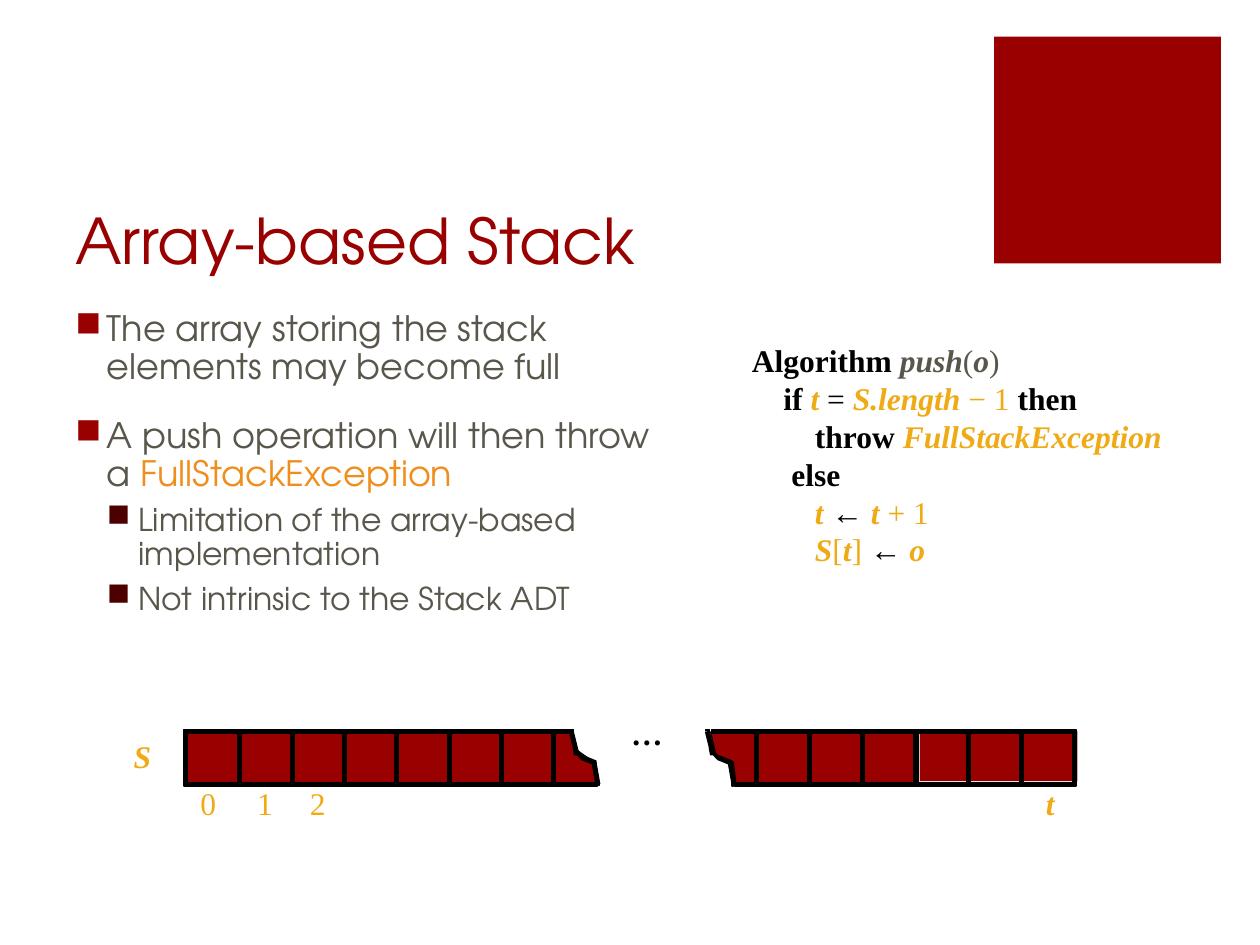
from dataclasses import dataclass

from lxml import etree
from pptx import Presentation
from pptx.dml.color import RGBColor
from pptx.enum.shapes import MSO_SHAPE as Shape
from pptx.enum.text import MSO_ANCHOR as Anchor, PP_ALIGN as Align
from pptx.oxml.ns import qn
from pptx.util import Inches, Pt


@dataclass(frozen=True)
class Theme:
    red: str = "990000"
    dark_red: str = "4C0000"
    gray: str = "59564B"
    orange: str = "EF8E1C"
    gold: str = "EFAB16"
    black: str = "000000"
    heading: str = "TeX Gyre Adventor"
    serif: str = "Times New Roman"
    title: int = 36
    body: int = 20
    small: int = 18
    line: float = 0.75


T = Theme()


class SlideBuilder:
    def __init__(self, slide, theme):
        self.s, self.t = slide, theme

    def style(self, sp, color, outlined):
        sp.shadow.inherit = False
        sp.fill.solid()
        sp.fill.fore_color.rgb = RGBColor.from_string(color)
        if outlined:
            sp.line.color.rgb = RGBColor.from_string(self.t.black)
            sp.line.width = Pt(self.t.line)
        else:
            sp.line.fill.background()

    def rect(self, x, y, w, h, color, outlined=False):
        sp = self.s.shapes.add_shape(Shape.RECTANGLE, Inches(x), Inches(y), Inches(w), Inches(h))
        self.style(sp, color, outlined)

    def bar(self, x, y, w, h):
        self.rect(x, y, w, h, self.t.black, True)

    def polygon(self, points, color, dx=0):
        (x, y), *rest = [(Inches(px + dx), Inches(py)) for px, py in points]
        fb = self.s.shapes.build_freeform(x, y)
        fb.add_line_segments(rest, close=True)
        self.style(fb.convert_to_shape(), color, True)

    def text_box(self, x, y, w, h, inset=True, wrap=True, anchor=Anchor.TOP):
        tf = self.s.shapes.add_textbox(Inches(x), Inches(y), Inches(w), Inches(h)).text_frame
        tf.word_wrap, tf.vertical_anchor = wrap, anchor
        if not inset:
            tf.margin_left = tf.margin_right = tf.margin_top = tf.margin_bottom = 0
        return tf

    def paragraph(self, tf, runs, size, font, align=Align.LEFT):
        """Each run is (text, color, flags); flags may hold b and i."""
        p = tf.paragraphs[0]
        if p.runs:
            p = tf.add_paragraph()
        p.alignment = align
        p.font.size, p.font.name = Pt(size), font
        for text, color, flags in runs:
            r = p.add_run()
            r.text = text
            r.font.color.rgb = RGBColor.from_string(color)
            r.font.bold, r.font.italic = "b" in flags, "i" in flags
        return p

    def bullet(self, tf, runs, level=0):
        size, before, color = [(self.t.body, 18, self.t.red),
                               (self.t.small, 6, self.t.dark_red)][level]
        p = self.paragraph(tf, runs, size, self.t.heading)
        p.level, p.line_spacing, p.space_before = level, 0.9, Pt(before)
        pPr = p._p.get_or_add_pPr()
        pPr.set("marL", str(Inches(0.25 * (level + 1))))
        pPr.set("indent", str(Inches(-0.25)))
        clr = etree.Element(qn("a:buClr"))
        etree.SubElement(clr, qn("a:srgbClr"), val=color)
        char = etree.Element(qn("a:buChar"), char="■")
        self.before_font(pPr, clr, char)

    def code_line(self, tf, runs):
        p = self.paragraph(tf, runs, self.t.small, self.t.serif)
        tabs = etree.Element(qn("a:tabLst"))
        for stop in (0.25, 0.5):
            etree.SubElement(tabs, qn("a:tab"), pos=str(Inches(stop)), algn="l")
        self.before_font(p._p.get_or_add_pPr(), tabs)

    def before_font(self, pPr, *elements):
        font = pPr.find(qn("a:defRPr"))
        for el in elements:
            font.addprevious(el)

    def label(self, text, x, y, w, color, flags="", align=Align.LEFT, wrap=False):
        tf = self.text_box(x, y, w, 0.4, inset=False, wrap=wrap)
        self.paragraph(tf, [(text, color, flags)], self.t.small, self.t.serif, align)


def main():
    prs = Presentation()
    prs.slide_width, prs.slide_height = Inches(10), Inches(7.5)
    b = SlideBuilder(prs.slides.add_slide(prs.slide_layouts[6]), T)

    # Corner block and title
    b.rect(7.89, 0.29, 1.8, 1.8, T.red)
    tf = b.text_box(0.5, 1, 7.12, 1.25, anchor=Anchor.BOTTOM)
    b.paragraph(tf, [("Array-based Stack", T.red, "")], T.title, T.heading)

    # Bullets
    tf = b.text_box(0.5, 2.42, 5.02, 4.28)
    b.bullet(tf, [("The array storing the stack elements may become full", T.gray, "")])
    b.bullet(tf, [("A push operation will then throw a ", T.gray, ""),
                  ("FullStackException", T.orange, "")])
    for text in ("Limitation of the array-based implementation",
                 "Not intrinsic to the Stack ADT"):
        b.bullet(tf, [(text, T.gray, "")], level=1)

    # Algorithm
    tf = b.text_box(5.87, 2.66, 3.5, 2.22)
    for runs in (
        [("Algorithm ", T.black, "b"), ("push", T.gray, "bi"), ("(", T.gray, ""),
         ("o", T.gray, "bi"), (")", T.gray, "")],
        [("\tif ", T.black, "b"), ("t ", T.gold, "bi"), ("= ", T.black, ""),
         ("S.length ", T.gold, "bi"), ("− 1 ", T.gold, ""), ("then", T.black, "b")],
        [("\t\tthrow ", T.black, "b"), ("FullStackException", T.gold, "bi")],
        [("\t ", T.black, ""), ("else", T.black, "b")],
        [("\t\tt ", T.gold, "bi"), ("← ", T.black, ""), ("t", T.gold, "bi"),
         (" + 1", T.gold, "")],
        [("\t\tS", T.gold, "bi"), ("[", T.gold, ""), ("t", T.gold, "bi"),
         ("] ", T.gold, ""), ("← ", T.black, ""), ("o", T.gold, "bi")],
    ):
        b.code_line(tf, runs)

    # Array body in two torn halves
    top, bottom, edge = 5.81, 6.22, 0.03
    b.rect(7.3, 5.8, 1.25, 0.4, T.red)
    b.polygon([(7.29, bottom), (7.29, top), (5.64, top), (5.68, 5.99),
               (5.82, 6.05), (5.84, bottom)], T.red)
    b.polygon([(1.47, top), (1.47, bottom), (4.73, bottom), (4.7, 6.04),
               (4.56, 5.94), (4.54, top)], T.red)

    # Outer borders
    for x, y, w in ((1.46, 5.79, 3.08), (1.47, 6.21, 3.26),
                    (5.65, 5.79, 2.89), (5.83, 6.21, 2.69)):
        b.bar(x, y, w, edge)
    for x in (1.46, 8.51):
        b.bar(x, top, edge, 0.43)

    # Cell dividers with their end caps
    dividers = [1.89 + 0.415 * i for i in range(7)] + [5.99 + 0.42 * i for i in range(6)]
    for x in dividers:
        for y, h in ((5.79, 0.01), (bottom, 0.01), (top, 0.41)):
            b.bar(x, y, edge, h)

    # Torn edges
    tear = (
        [(4.55, 5.81), (4.58, 5.93), (4.59, 5.97), (4.63, 6.01), (4.63, 6), (4.62, 6.03),
         (4.58, 5.99), (4.56, 5.99), (4.55, 5.94), (4.55, 5.93), (4.52, 5.81)],
        [(4.63, 6), (4.73, 6.04), (4.73, 6.05), (4.7, 6.05), (4.72, 6.07), (4.62, 6.03)],
        [(4.73, 6.05), (4.7, 6.05), (4.73, 6.22), (4.76, 6.22)],
    )
    for dx in (0, 1.08):
        for x, y, w, h in ((4.54, 5.79, 0.01, edge), (4.73, 6.21, 0.01, edge),
                           (4.52, 5.79, edge, 0.01), (4.73, bottom, edge, 0.01)):
            b.bar(x + dx, y, w, h)
        for points in tear:
            b.polygon(points, T.black, dx)

    # Array labels
    b.label("S", 0.97, 5.85, 0.32, T.gold, "bi", Align.CENTER, True)
    for text, x in (("0", 1.59), ("1", 2.04), ("2", 2.46)):
        b.label(text, x, bottom, 0.17, T.gold)
    b.label("t", 8.18, bottom, 0.31, T.gold, "bi", Align.CENTER, True)
    b.label("…", 5.01, 5.67, 0.33, T.black, "b")

    prs.save("out.pptx")


if __name__ == "__main__":
    main()
